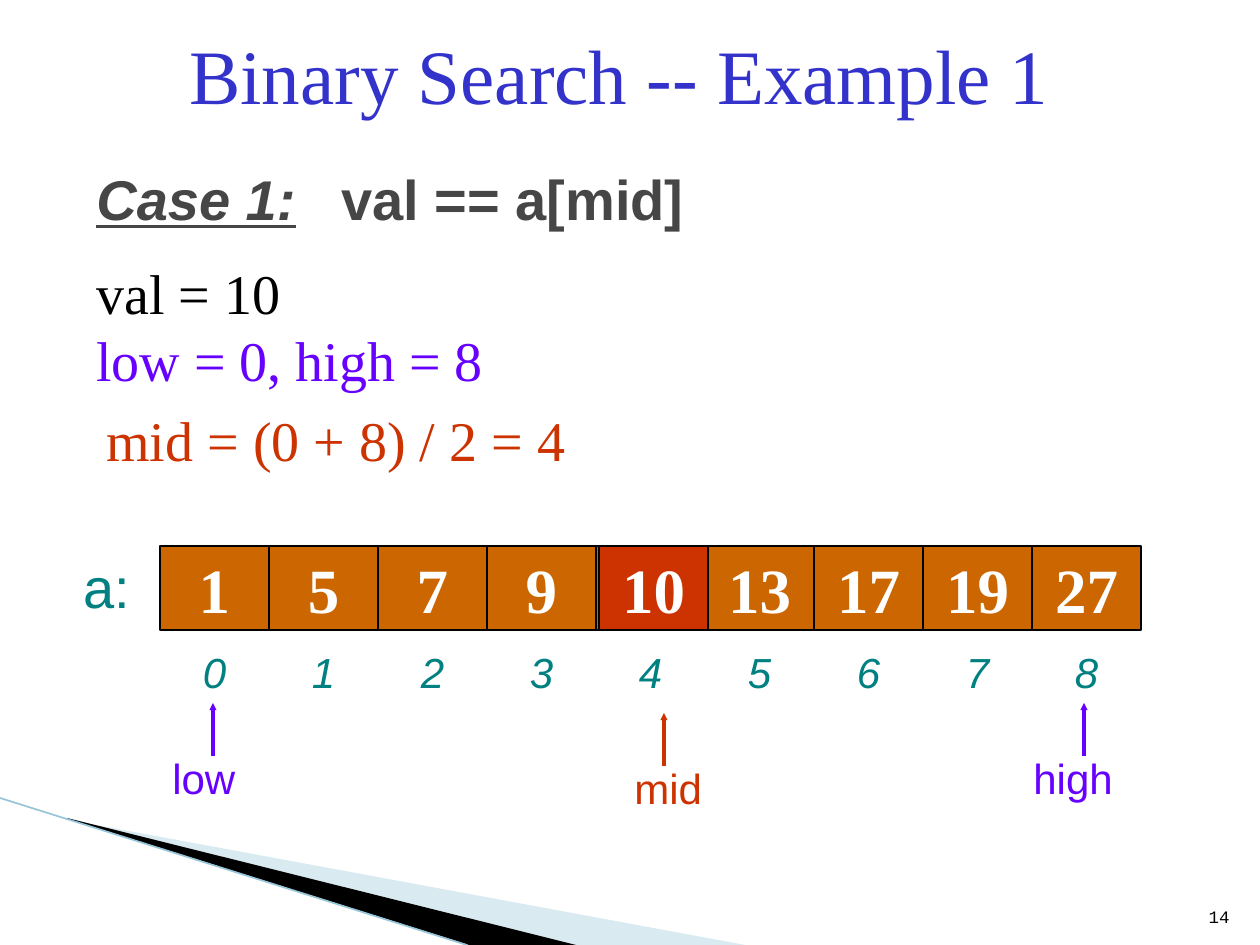
from lxml.etree import SubElement
from pptx import Presentation
from pptx.dml.color import RGBColor
from pptx.enum.shapes import MSO_CONNECTOR as Connector, MSO_SHAPE as Shape
from pptx.enum.text import MSO_ANCHOR as Anchor, PP_ALIGN as Align
from pptx.oxml.ns import qn
from pptx.util import Emu, Pt

SCALE = 914400 / 126
COLORS = {
    "title": "3333CC", "heading": "464646", "black": "000000", "white": "FFFFFF",
    "bounds": "6600FF", "mid": "CC3300", "cell": "CC6600", "teal": "008080",
    "swoosh": "A0CBDC", "edge": "97C5D8",
}
SERIF, SANS, MONO = "Times New Roman", "Arial", "Courier New"
VALUES = [1, 5, 7, 9, 10, 13, 17, 19, 27]


def px(length):
    return Emu(round(length * SCALE))


def rgb(name):
    return RGBColor.from_string(COLORS[name])


def add_span(para, text, font, size, color, bold=False, italic=False, underline=False):
    span = para.add_run()
    span.text = text
    span.font.name, span.font.size = font, Pt(size)
    span.font.color.rgb = rgb(color)
    span.font.bold, span.font.italic, span.font.underline = bold, italic, underline


def add_text(page, box, text, font, size, color, align=Align.LEFT, anchor=Anchor.TOP,
             wrap=True, **style):
    frame = page.shapes.add_textbox(*map(px, box)).text_frame
    frame.word_wrap, frame.vertical_anchor = wrap, anchor
    para = frame.paragraphs[0]
    para.alignment = align
    add_span(para, text, font, size, color, **style)
    return frame


def add_line(page, start, end, color, width):
    line = page.shapes.add_connector(Connector.STRAIGHT, *map(px, start + end))
    line.line.color.rgb, line.line.width = rgb(color), Pt(width)
    SubElement(line._element.spPr, qn("a:effectLst"))
    return line


def add_wedge(page, points, color, opacity=100):
    builder = page.shapes.build_freeform(*points[0], scale=SCALE)
    builder.add_line_segments(points[1:])
    wedge = builder.convert_to_shape()
    wedge.shadow.inherit = False
    wedge.fill.solid()
    wedge.fill.fore_color.rgb = rgb(color)
    wedge.line.fill.background()
    if opacity < 100:
        tint = wedge._element.spPr.find(qn("a:solidFill"))[0]
        SubElement(tint, qn("a:alpha"), val=str(opacity * 1000))


def add_corner(page, box):
    left, top, width, height = box
    bottom = top + height
    add_wedge(page, [(left + 69, top + 22), (left + width, bottom),
                     (left + 575, bottom), (left + 69, top + 21)], "swoosh", 40)
    add_wedge(page, [(left + 67, top + 20), (left + 576, bottom),
                     (left + 469, bottom), (left + 68, top + 21)], "black")
    add_line(page, (left, top), (left + 467, bottom), "edge", 0.95)


def add_case(page, box):
    left, top, width, _ = box
    frame = add_text(page, (left, top, width, 79), "Case 1:", SANS, 32, "heading",
                     bold=True, italic=True, underline=True)
    para = frame.paragraphs[0]
    tabs = SubElement(para._p.get_or_add_pPr(), qn("a:tabLst"))
    SubElement(tabs, qn("a:tab"), pos=str(px(245)), algn="l")
    add_span(para, "\tval == a[mid]", SANS, 32, "heading", bold=True)

    frame = add_text(page, (left, top + 94, 588, 147), "val = 10", SERIF, 32, "black")
    add_span(frame.add_paragraph(), "low = 0, high = 8", SERIF, 32, "bounds")
    add_text(page, (left + 10, top + 241, 525, 79), "mid = (0 + 8) / 2 = 4",
             SERIF, 32, "mid")


def add_cell(page, box, value, color):
    cell = page.shapes.add_shape(Shape.RECTANGLE, *map(px, box))
    cell.shadow.inherit = False
    cell.fill.solid()
    cell.fill.fore_color.rgb = rgb(color)
    cell.line.color.rgb, cell.line.width = rgb("black"), Pt(0.75)
    frame = cell.text_frame
    frame.word_wrap, frame.vertical_anchor = False, Anchor.MIDDLE
    para = frame.paragraphs[0]
    para.alignment = Align.CENTER
    add_span(para, str(value), SERIF, 36, "white", bold=True)


def add_array(page, box, values, middle):
    """Row of cells with their indexes below; the middle cell is overlaid last."""
    left, top, width, height = box
    step = width // len(values)
    add_text(page, (left - 89, top, 84, 79), "a:", SANS, 32, "teal")
    for index, value in enumerate(values):
        x = left + index * step
        add_cell(page, (x, top, step, height), value, "cell")
        add_text(page, (x, top + height, step, height), str(index), SANS, 24, "teal",
                 Align.CENTER, Anchor.MIDDLE, wrap=False, italic=True)
    add_cell(page, (left + middle * step + 3, top, step, height), values[middle], "mid")


def add_pointer(page, box, text, color, arrow_offset):
    """Label with an arrow that rises from its top edge."""
    left, top, _, _ = box
    add_text(page, box, text, SANS, 24, color)
    x = left + arrow_offset
    arrow = add_line(page, (x, top + 10), (x, top - 43), color, 2)
    SubElement(arrow.line._get_or_add_ln(), qn("a:tailEnd"),
               type="triangle", w="sm", len="sm")


def main():
    deck = Presentation()
    deck.slide_width, deck.slide_height = px(1260), px(945)
    page = deck.slides.add_slide(deck.slide_layouts[6])
    add_corner(page, (0, 798, 745, 147))
    add_text(page, (1192, 883, 50, 50), "14", MONO, 10, "black",
             Align.RIGHT, Anchor.BOTTOM)
    add_text(page, (84, 32, 1071, 84), "Binary Search -- Example 1", SERIF, 44, "title",
             Align.CENTER, Anchor.MIDDLE)
    add_case(page, (84, 158, 892, 320))
    add_array(page, (160, 546, 981, 84), VALUES, 4)
    add_pointer(page, (160, 746, 126, 63), "low", "bounds", 53)
    add_pointer(page, (1021, 746, 147, 63), "high", "bounds", 63)
    add_pointer(page, (622, 756, 94, 63), "mid", "mid", 42)
    deck.save("out.pptx")


if __name__ == "__main__":
    main()
